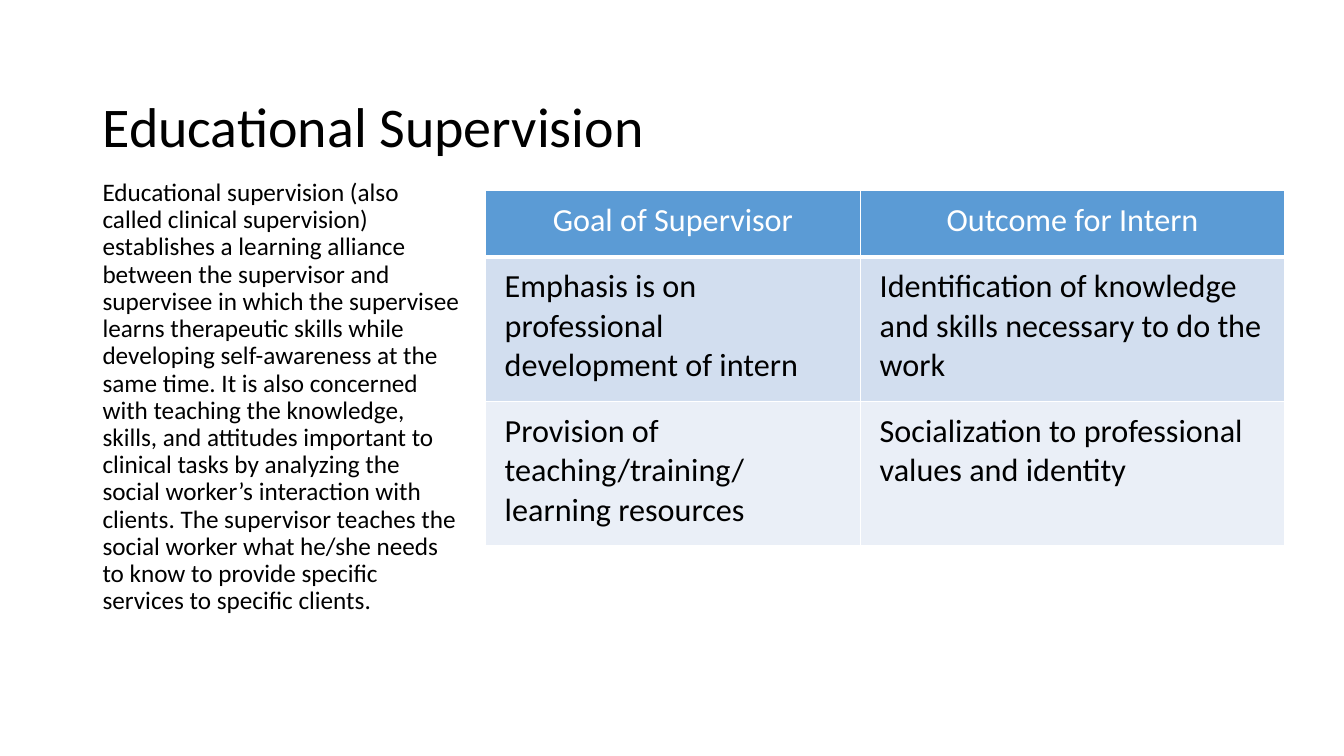
from lxml.etree import SubElement as Sub
from pptx import Presentation
from pptx.dml.color import RGBColor as RGB
from pptx.enum.text import MSO_ANCHOR as Anchor, MSO_AUTO_SIZE as Fit, PP_ALIGN as Align
from pptx.oxml.ns import qn
from pptx.util import Cm, Pt

COLORS = {
    "black": "000000",
    "white": "FFFFFF",
    "head": "5B9BD5",
    "odd": "D2DEEF",
    "even": "EAEFF7",
}

INTRO = (
    "Educational supervision (also called clinical supervision) establishes a "
    "learning alliance between the supervisor and supervisee in which the "
    "supervisee learns therapeutic skills while developing self-awareness at "
    "the same time. It is also concerned with teaching the knowledge, skills, "
    "and attitudes important to clinical tasks by analyzing the social "
    "worker’s interaction with clients. The supervisor teaches the social "
    "worker what he/she needs to know to provide specific services to "
    "specific clients."
)

ROWS = [
    ("Goal of Supervisor", "Outcome for Intern"),
    ("Emphasis is on professional development of intern",
     "Identification of knowledge and skills necessary to do the work"),
    ("Provision of teaching/training/ learning resources",
     "Socialization to professional values and identity"),
]


def write(frame, text, size, color="black", align=Align.LEFT, line=1.0):
    frame.word_wrap = True
    para = frame.paragraphs[0]
    para.text = text
    para.alignment = align
    para.line_spacing = line
    para.space_before = Pt(0)
    props = para._p.get_or_add_pPr()
    props.set("marL", "0")
    props.set("indent", "0")
    Sub(props, qn("a:buNone"))
    font = para.font
    font.name = "Calibri"
    font.size = Pt(size)
    run = para.runs[0].font
    run.name = "Calibri"
    run.size = Pt(size)
    run.color.rgb = RGB.from_string(COLORS[color])


def place(holder, box, text, size, anchor):
    holder.left, holder.top, holder.width, holder.height = map(Cm, box)
    frame = holder.text_frame
    frame.auto_size = Fit.NONE
    frame.vertical_anchor = anchor
    write(frame, text, size, line=0.9)


def edge(cell, side, width):
    props = cell._tc.get_or_add_tcPr()
    line = Sub(props, qn(f"a:ln{side}"), w=str(Pt(width)))
    fill = Sub(line, qn("a:solidFill"))
    Sub(fill, qn("a:srgbClr"), val=COLORS["white"])


def paint(cell, text, head, fill):
    cell.margin_left = cell.margin_right = Cm(0.48)
    cell.margin_top = cell.margin_bottom = Cm(0.25)
    for side in "LRTB":
        edge(cell, side, 3 if head and side == "B" else 1)
    cell.fill.solid()
    cell.fill.fore_color.rgb = RGB.from_string(COLORS[fill])
    write(cell.text_frame, text, 23,
          color="white" if head else "black",
          align=Align.CENTER if head else Align.LEFT)


def grid(slide, left, top, widths, heights):
    size = Cm(sum(widths)), Cm(sum(heights))
    table = slide.shapes.add_table(
        len(heights), len(widths), Cm(left), Cm(top), *size).table
    for col, width in zip(table.columns, widths):
        col.width = Cm(width)
    for row, height in zip(table.rows, heights):
        row.height = Cm(height)
    for r, (texts, fill) in enumerate(zip(ROWS, ("head", "odd", "even"))):
        for c, text in enumerate(texts):
            paint(table.cell(r, c), text, r == 0, fill)


def main():
    deck = Presentation()
    deck.slide_width, deck.slide_height = Cm(33.87), Cm(19.05)
    slide = deck.slides.add_slide(deck.slide_layouts[1])
    title, body = slide.placeholders
    place(title, (2.33, 1.78, 16.15, 2.36), "Educational Supervision", 40, Anchor.BOTTOM)
    place(body, (2.33, 4.4, 9.55, 12.88), INTRO, 18, Anchor.TOP)
    grid(slide, 12.24, 4.8, (9.45, 10.69), (1.68, 3.64, 3.64))
    deck.save("out.pptx")


if __name__ == "__main__":
    main()
